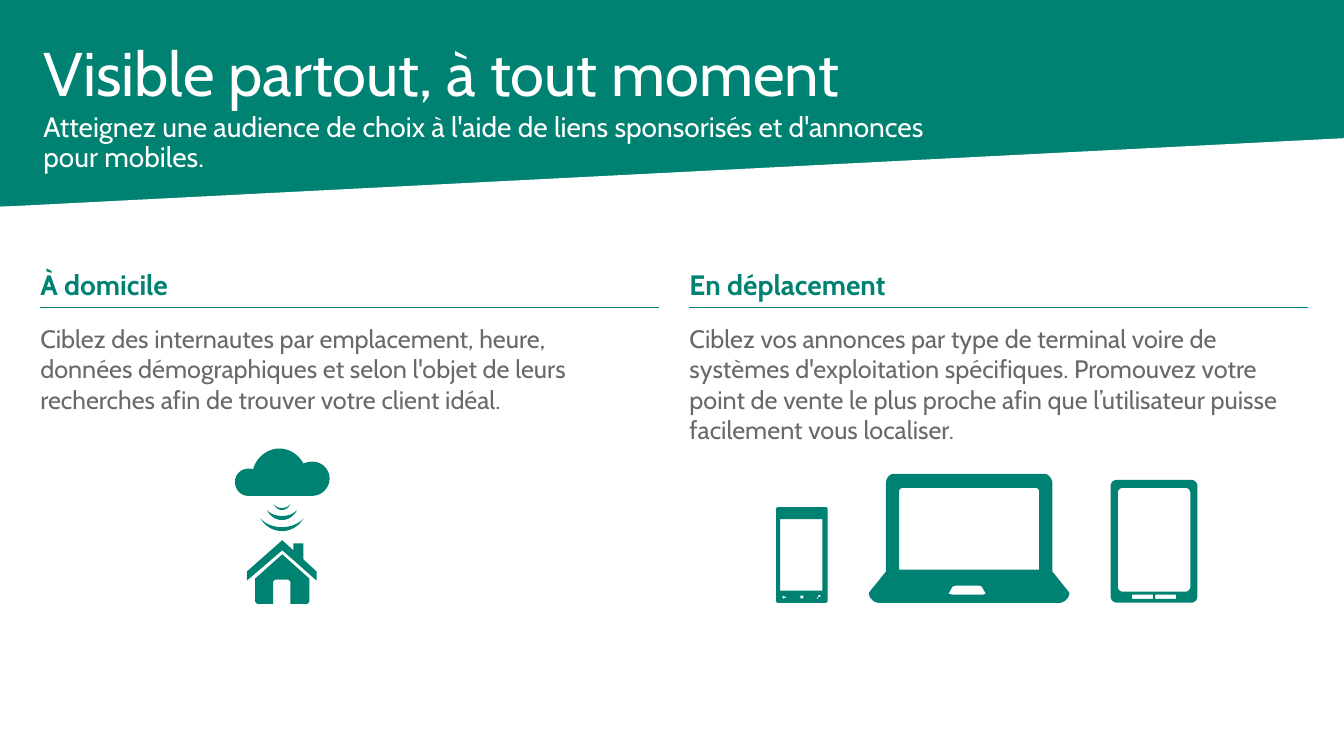
from dataclasses import dataclass
from lxml import etree
from pptx import Presentation
from pptx.dml.color import RGBColor
from pptx.enum.shapes import MSO_CONNECTOR, MSO_SHAPE
from pptx.enum.text import MSO_ANCHOR, MSO_AUTO_SIZE, PP_ALIGN
from pptx.oxml.ns import qn
from pptx.util import Pt

RECT, TRIANGLE = MSO_SHAPE.RECTANGLE, MSO_SHAPE.RIGHT_TRIANGLE
STRAIGHT = MSO_CONNECTOR.STRAIGHT
TOP, MIDDLE = MSO_ANCHOR.TOP, MSO_ANCHOR.MIDDLE
LEFT, NO_FIT = PP_ALIGN.LEFT, MSO_AUTO_SIZE.NONE
TITLE_ONLY = 5


@dataclass(frozen=True)
class Theme:
    """Colours, font and type sizes of the slide."""
    green: RGBColor = RGBColor(0x00, 0x82, 0x72)
    grey: RGBColor = RGBColor(0x69, 0x69, 0x69)
    white: RGBColor = RGBColor(0xFF, 0xFF, 0xFF)
    font: str = "Cabin"
    title: float = 44
    head: float = 20
    body: float = 18


def trace(start, *steps):
    """Return a contour; a step of two numbers is a line, of six a cubic curve."""
    pts = [start]
    for step in steps:
        if len(step) == 2:
            pts.append(step)
            continue
        ends = (pts[-1], step[:2], step[2:4], step[4:])
        for i in range(1, 13):
            t = i / 12
            weights = ((1 - t) ** 3, 3 * t * (1 - t) ** 2, 3 * t * t * (1 - t), t ** 3)
            pts.append(tuple(sum(w * e[k] for w, e in zip(weights, ends)) for k in (0, 1)))
    return pts


def rounded(x, y, w, h, r=0):
    """Return the contour of a rectangle with rounded corners."""
    if not r:
        return [(x, y), (x + w, y), (x + w, y + h), (x, y + h)]
    x2, y2, c = x + w, y + h, 0.45 * r
    return trace((x + r, y), (x2 - r, y), (x2 - c, y, x2, y + c, x2, y + r),
                 (x2, y2 - r), (x2, y2 - c, x2 - c, y2, x2 - r, y2),
                 (x + r, y2), (x + c, y2, x, y2 - c, x, y2 - r),
                 (x, y + r), (x, y + c, x + c, y, x + r, y))


def wave(cx, y, half, inner, outer):
    """Return a crescent hanging from y with the given inner and outer depths."""
    k, a, b = 0.55 * half, y + inner * 4 / 3, y + outer * 4 / 3
    return trace((cx + half, y), (cx + k, a, cx - k, a, cx - half, y),
                 (cx - k, b, cx + k, b, cx + half, y))


class Deck:
    """Draws styled elements on the current slide."""

    def __init__(self, prs, theme):
        """Add a title-only slide."""
        self.theme = theme
        self.s = prs.slides.add_slide(prs.slide_layouts[TITLE_ONLY])

    def paint(self, sp, color):
        """Give a shape a plain fill without line or shadow."""
        sp.shadow.inherit = False
        sp.fill.solid()
        sp.fill.fore_color.rgb = color
        sp.line.fill.background()

    def shape(self, kind, box, color, flip=False):
        """Add a preset shape."""
        sp = self.s.shapes.add_shape(kind, *map(Pt, box))
        self.paint(sp, color)
        if flip:
            sp.element.spPr.find(qn("a:xfrm")).set("flipH", "1")

    def icon(self, *contours):
        """Add one green outline made of several contours."""
        pts = [[(Pt(x), Pt(y)) for x, y in c] for c in contours]
        builder = self.s.shapes.build_freeform(*pts[0][0])
        for i, c in enumerate(pts):
            if i:
                builder.move_to(*c[0])
            builder.add_line_segments(c[1:], close=True)
        self.paint(builder.convert_to_shape(), self.theme.green)

    def rule(self, x, y, w):
        """Add a horizontal line."""
        sp = self.s.shapes.add_connector(STRAIGHT, Pt(x), Pt(y), Pt(x + w), Pt(y))
        sp.line.color.rgb = self.theme.green
        sp.line.width = Pt(1.25)
        etree.SubElement(sp._element.spPr, qn("a:effectLst"))

    def typeset(self, sp, box, text, size, color, bold=False, inset=(0, 0, 0, 0),
                anchor=TOP, spacing=1.0):
        """Place a text shape and format its single paragraph."""
        tf = sp.text_frame
        tf.text = text
        p = tf.paragraphs[0]
        left, top, right, bottom = map(Pt, inset)
        formats = (
            (sp, dict(zip(("left", "top", "width", "height"), map(Pt, box)))),
            (tf, {"word_wrap": True, "auto_size": NO_FIT, "vertical_anchor": anchor,
                  "margin_left": left, "margin_top": top,
                  "margin_right": right, "margin_bottom": bottom}),
            (p, {"alignment": LEFT, "line_spacing": spacing}),
            (p.runs[0].font, {"name": self.theme.font, "size": Pt(size), "bold": bold}),
        )
        for obj, values in formats:
            for name, value in values.items():
                setattr(obj, name, value)
        p.runs[0].font.color.rgb = color

    def title(self, box, text):
        """Fill the title placeholder and bring it in front of the band."""
        sp = self.s.shapes.title
        self.typeset(sp, box, text, self.theme.title, self.theme.white, spacing=0.9)
        self.s.shapes._spTree.append(sp._element)

    def text(self, box, *args, **kwargs):
        """Add a text box."""
        self.typeset(self.s.shapes.add_textbox(0, 0, 0, 0), box, *args, **kwargs)

    def column(self, x, head, body):
        """Add a heading, its rule and the paragraph below."""
        t, w, y, inset = self.theme, 442, 219.6, (0, 11.5, 14.4, 11.5)
        self.text((x, y, w, 211.7), body, t.body, t.grey, inset=inset)
        self.text((x, y - 32.4, w, 31.7), head, t.head, t.green, bold=True,
                  inset=inset, anchor=MIDDLE)
        self.rule(x, y, w)


def main():
    """Build the slide and save it."""
    prs = Presentation()
    prs.slide_width, prs.slide_height = Pt(960), Pt(540)
    theme = Theme()
    d = Deck(prs, theme)

    d.shape(RECT, (0, 0, 960, 147.6), theme.green)
    d.shape(TRIANGLE, (0, 98.7, 960, 49), theme.white, flip=True)
    d.title((31, 31, 839.5, 39.6), "Visible partout, à tout moment")
    d.text((31, 80.6, 629.3, 41.8),
           "Atteignez une audience de choix à l'aide de liens sponsorisés et d'annonces pour mobiles.",
           theme.head, theme.white, spacing=0.9)

    d.column(28.8, "À domicile",
             "Ciblez des internautes par emplacement, heure, données démographiques et selon "
             "l'objet de leurs recherches afin de trouver votre client idéal.")
    d.column(492.5, "En déplacement",
             "Ciblez vos annonces par type de terminal voire de systèmes d'exploitation "
             "spécifiques. Promouvez votre point de vente le plus proche afin que "
             "l’utilisateur puisse facilement vous localiser.")

    cloud = trace((223.2, 329.8), (220.3, 329.8, 218.2, 330.5, 216.7, 331.2),
                  (213.8, 325.4, 207.4, 320.4, 199.4, 320.4),
                  (190.8, 320.4, 182.9, 326.9, 180.7, 335.5),
                  (180, 334.8, 178.6, 334.8, 177.1, 334.8),
                  (172.1, 334.8, 167.8, 339.1, 167.8, 344.2),
                  (167.8, 349.9, 172.1, 354.2, 177.1, 354.2), (223.2, 354.2),
                  (229.7, 354.2, 235.4, 348.5, 235.4, 342),
                  (235.4, 334.8, 229.7, 329.8, 223.2, 329.8))
    waves = [wave(201.4, *w) for w in
             ((360, 6.1, 2.9, 4.3), (364.3, 10.8, 4.3, 7.2), (370.1, 15.5, 6.5, 9.3))]
    walls = [(182.2, 413.3), (182.2, 429.8), (183.6, 431.3), (195.1, 431.3),
             (195.1, 415.4), (196.6, 414), (205.9, 414), (207.4, 415.4),
             (207.4, 431.3), (219.6, 431.3), (221, 429.8), (221, 413.3), (201.6, 396)]
    roof = [(216.7, 388.1), (209.5, 388.1), (209.5, 393.1), (201.6, 385.9),
            (176.4, 408.2), (176.4, 414.7), (201.6, 393.1), (226.1, 414.7),
            (226.1, 408.2), (216.7, 399.6)]
    d.icon(cloud, *waves, walls, roof)

    back_key = [(558.7, 426.2), (559.5, 425.5), (560.2, 425.5), (559.6, 426.2),
                (561.6, 426.2), (561.6, 427), (559.6, 427), (560.2, 427.7), (559.5, 427.7)]
    search_handle = [(583.2, 427.3), (584.2, 426.3), (584.7, 426.8), (583.7, 427.8)]
    d.icon(rounded(554.4, 362.2, 36.7, 68.4, 1.4), rounded(557.3, 370.8, 30.2, 51.1),
           back_key, rounded(571.8, 425.5, 2, 2),
           rounded(584.4, 424.8, 1.8, 1.8, 0.9), search_handle)

    lid = trace((751.7, 408.2), (751.7, 344.9), (751.7, 342, 748.8, 338.4, 745.9, 338.4),
                (638.6, 338.4), (635, 338.4, 632.9, 342, 632.9, 344.9), (632.9, 408.2),
                (620.6, 423.4), (620.6, 427, 624.2, 430.6, 627.8, 430.6),
                (756.7, 430.6), (760.3, 430.6, 763.9, 427, 763.9, 423.4))
    screen = trace((742.3, 406.8), (642.2, 406.8), (642.2, 351.4),
                   (642.2, 349.2, 643.7, 348.5, 645.1, 348.5), (739.4, 348.5),
                   (740.9, 348.5, 742.3, 349.2, 742.3, 351.4))
    trackpad = [(680.4, 424.8), (677.5, 424.1), (680.4, 419), (682.6, 418.3),
                (699.8, 418.3), (701.3, 419), (704.2, 424.1), (702, 424.8)]
    d.icon(lid, screen, trackpad)

    d.icon(rounded(793.4, 342.7, 61.9, 87.8, 4.5), rounded(798.5, 348.5, 51.8, 74.1, 3.5),
           *[rounded(x, 424.8, 15.1, 2.9, 0.3) for x in (808.6, 825.1)])

    prs.save("out.pptx")


if __name__ == "__main__":
    main()
